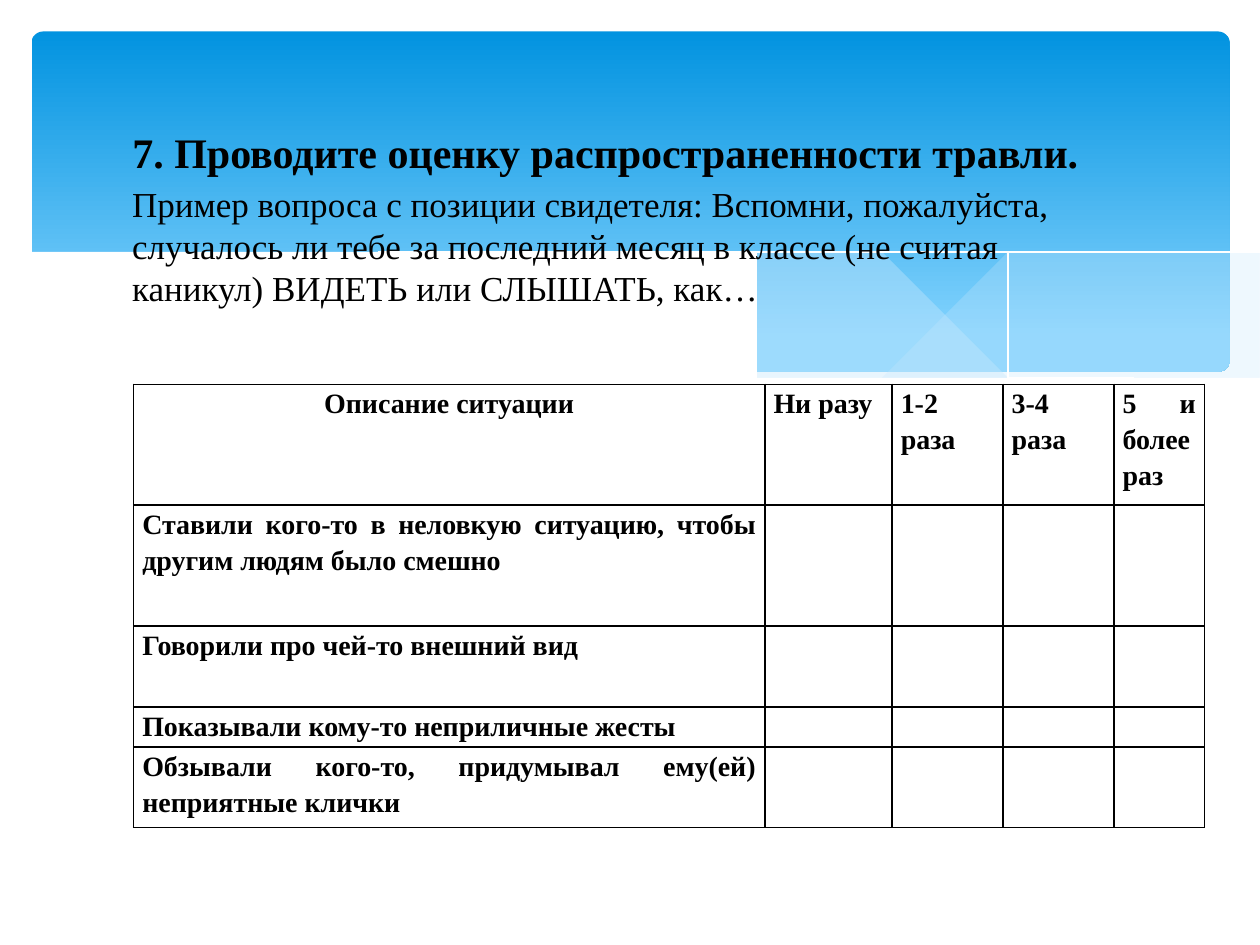
import pptx
import pptx.util
import pptx.dml.color
import pptx.enum.shapes
import pptx.enum.text
import pptx.oxml
import pptx.oxml.ns
from lxml import etree

Inches, Pt = pptx.util.Inches, pptx.util.Pt
ALIGN = pptx.enum.text.PP_ALIGN
FONT = "Times New Roman"
COLORS = {"text": "000000", "sky": "0293E0", "pale": "83D3FE", "ribbon": "C6E7FC", "white": "FFFFFF"}

HEADING = "7. Проводите оценку распространенности травли."
QUESTION = (
    "Пример вопроса с позиции свидетеля: Вспомни, пожалуйста, случалось ли тебе за последний "
    "месяц в классе (не считая каникул) ВИДЕТЬ или СЛЫШАТЬ, как…"
)
HEADERS = ["Описание ситуации", "Ни разу ", "1-2 раза ", "3-4 раза ", "5 и более раз"]
SITUATIONS = [
    "Ставили кого-то в неловкую ситуацию, чтобы другим людям было смешно",
    "Говорили про чей-то внешний вид",
    "Показывали кому-то неприличные жесты",
    "Обзывали кого-то, придумывал ему(ей) неприятные клички",
]
COLUMN_WIDTHS = [5.01, 1.01, 0.88, 0.88, 0.72]
ROW_HEIGHTS = [0.96, 0.96, 0.64, 0.32, 0.64]

RIBBONS = [
    (29, [
        [(9.76, 2), (9.35, 2.07), (8.61, 2.23), (7.53, 2.48), (6.61, 2.65)],
        [(6.61, 2.65), (7.19, 2.72), (7.81, 2.77), (8.44, 2.77), (8.97, 2.7), (9.42, 2.59), (9.76, 2.47)],
    ]),
    (40, [
        [(8.93, 2.73), (8.07, 2.6), (7.06, 2.4), (6.29, 2.22), (5.41, 2.03), (4.65, 1.91), (3.8, 1.85),
         (3.28, 1.87), (2.86, 1.91)],
        [(2.86, 1.91), (3.62, 2.03), (4.49, 2.22), (5.3, 2.4), (6.18, 2.58), (6.95, 2.7), (7.61, 2.77),
         (8.28, 2.78), (8.93, 2.73)],
    ]),
]
STRANDS = [
    [(3.09, 1.95), (3.53, 1.89), (4.16, 1.87), (4.89, 1.9), (5.82, 2), (6.65, 2.13), (7.6, 2.33),
     (8.31, 2.51), (9.07, 2.72)],
    [(6.13, 2.57), (6.95, 2.35), (7.76, 2.16), (8.66, 1.99), (9.24, 1.9), (9.75, 1.85)],
]
WAVE = [
    [(9.77, 2.46), (9.3, 2.62), (8.75, 2.73), (8.09, 2.77), (7.26, 2.72), (6.48, 2.62), (5.55, 2.45),
     (4.47, 2.2), (3.4, 1.97), (2.5, 1.86), (1.77, 1.84), (1.19, 1.87), (0.67, 1.97), (0.23, 2.13)],
    [(0.23, 3.29), (9.77, 3.29)],
]


def rgb(name):
    return pptx.dml.color.RGBColor.from_string(COLORS[name])


def smooth(points, steps=5):
    if len(points) < 3:
        return points
    padded = [points[0], *points, points[-1]]
    curve = [points[0]]
    for a, b, c, d in zip(padded, padded[1:], padded[2:], padded[3:]):
        for step in range(1, steps + 1):
            t = step / steps
            curve.append(tuple(
                (2 * q + (r - p) * t + (2 * p - 5 * q + 4 * r - s) * t**2 + (3 * q - p - 3 * r + s) * t**3) / 2
                for p, q, r, s in zip(a, b, c, d)
            ))
    return curve


def add_outline(page, edges, close=True):
    points = [point for edge in edges for point in smooth(edge)]
    builder = page.shapes.build_freeform(*points[0], scale=Inches(1))
    builder.add_line_segments(points[1:], close=close)
    shape = builder.convert_to_shape()
    shape.shadow.inherit = False
    return shape


def add_area(page, edges, color, alpha=100):
    shape = add_outline(page, edges)
    shape.fill.solid()
    shape.fill.fore_color.rgb = rgb(color)
    shape.line.fill.background()
    if alpha < 100:
        tint = shape.fill._xPr.find(".//" + pptx.oxml.ns.qn("a:srgbClr"))
        etree.SubElement(tint, pptx.oxml.ns.qn("a:alpha"), val=str(alpha * 1000))


def add_banner(page):
    banner = page.shapes.add_shape(
        pptx.enum.shapes.MSO_SHAPE.ROUNDED_RECTANGLE, Inches(0.25), Inches(0.25), Inches(9.51), Inches(2.7))
    banner.adjustments[0] = 0.034
    banner.shadow.inherit = False
    banner.line.fill.background()
    banner.fill.gradient()
    banner.fill.gradient_angle = 270
    for stop, color, position in zip(banner.fill.gradient_stops, ("sky", "pale"), (0, 0.9)):
        stop.color.rgb = rgb(color)
        stop.position = position
    for alpha, edges in RIBBONS:
        add_area(page, edges, "ribbon", alpha)
    for strand in STRANDS:
        line = add_outline(page, [strand], close=False)
        line.fill.background()
        line.line.color.rgb = rgb("white")
        line.line.width = Pt(0)
    add_area(page, WAVE, "white")


def write(frame, text, size, bold, align):
    frame.word_wrap = True
    para = frame.paragraphs[0]
    para.alignment = align
    span = para.add_run()
    span.text = text
    span.font.name, span.font.size, span.font.bold = FONT, Pt(size), bold
    span.font.color.rgb = rgb("text")
    return para


def place(box, top, height):
    box.left, box.top, box.width, box.height = Inches(0.95), Inches(top), Inches(8.1), Inches(height)
    box.text_frame.vertical_anchor = pptx.enum.text.MSO_ANCHOR.TOP


def format_cell(cell):
    cell.fill.background()
    cell.margin_left = cell.margin_right = Inches(0.07)
    cell.margin_top = cell.margin_bottom = 0
    properties = cell._tc.get_or_add_tcPr()
    for index, side in enumerate(("lnL", "lnR", "lnT", "lnB")):
        properties.insert(index, pptx.oxml.parse_xml(
            f'<a:{side} {pptx.oxml.ns.nsdecls("a")} w="12700"><a:solidFill>'
            f'<a:srgbClr val="{COLORS["text"]}"/></a:solidFill></a:{side}>'))


def add_survey(page):
    rows = [HEADERS] + [[situation] + [""] * 4 for situation in SITUATIONS]
    table = page.shapes.add_table(
        len(rows), len(HEADERS), Inches(1.06), Inches(3.05),
        Inches(sum(COLUMN_WIDTHS)), Inches(sum(ROW_HEIGHTS))).table
    table.first_row = table.horz_banding = False
    for column, width in zip(table.columns, COLUMN_WIDTHS):
        column.width = Inches(width)
    for r, (texts, height) in enumerate(zip(rows, ROW_HEIGHTS)):
        table.rows[r].height = Inches(height)
        for c, text in enumerate(texts):
            cell = table.cell(r, c)
            format_cell(cell)
            if text:
                align = ALIGN.CENTER if r == c == 0 else ALIGN.JUSTIFY
                write(cell.text_frame, text, 16, True, align).line_spacing = 1.15


def main():
    deck = pptx.Presentation()
    deck.slide_width, deck.slide_height = Inches(10), Inches(7.5)
    page = deck.slides.add_slide(deck.slide_layouts[5])
    add_banner(page)
    title = page.shapes.title
    page.shapes._spTree.append(title._element)
    place(title, 0.95, 0.47)
    write(title.text_frame, HEADING, 24, True, ALIGN.LEFT)
    question = page.shapes.add_textbox(0, 0, 0, 0)
    place(question, 1.4, 1.1)
    write(question.text_frame, QUESTION, 20, False, ALIGN.LEFT)
    add_survey(page)
    deck.save("out.pptx")


if __name__ == "__main__":
    main()
